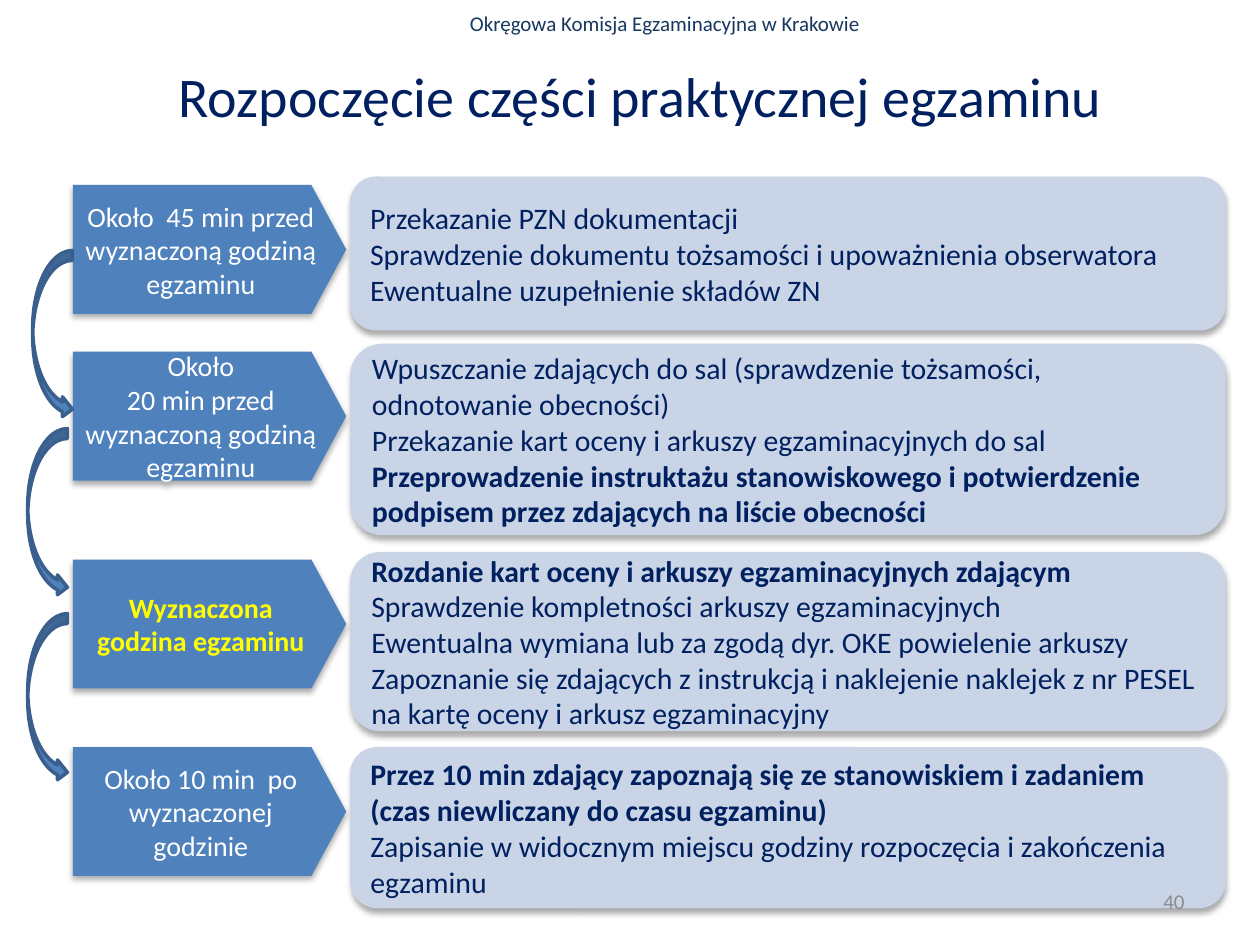
import dataclasses

import lxml.etree
import pptx
import pptx.dml.color
import pptx.enum.shapes
import pptx.enum.text
import pptx.oxml.ns
import pptx.util

Cm = pptx.util.Cm
Pt = pptx.util.Pt
MSO_SHAPE = pptx.enum.shapes.MSO_SHAPE
PP_ALIGN = pptx.enum.text.PP_ALIGN
MSO_ANCHOR = pptx.enum.text.MSO_ANCHOR


@dataclasses.dataclass(frozen=True)
class Theme:
    font: str = "Calibri"
    navy: str = "002060"
    header: str = "17375E"
    blue: str = "4F81BD"
    outline: str = "3A5F8C"
    card: str = "C9D4E6"
    white: str = "FFFFFF"
    yellow: str = "FFFF00"
    grey: str = "8C8C8C"
    shadow: str = "000000"
    title_size: int = 32
    card_size: int = 17
    tag_size: int = 16
    small_size: int = 12


def rgb(color):
    return pptx.dml.color.RGBColor.from_string(color)


class SlideBuilder:
    def __init__(self, prs, theme):
        self.theme = theme
        self.s = prs.slides.add_slide(prs.slide_layouts[5])

    def fill_text(self, tf, lines, size, color, align, anchor=MSO_ANCHOR.MIDDLE):
        tf.word_wrap = True
        tf.vertical_anchor = anchor
        for i, (text, bold) in enumerate(lines):
            p = tf.paragraphs[0] if i == 0 else tf.add_paragraph()
            p.alignment = align
            r = p.add_run()
            r.text = text
            r.font.name = self.theme.font
            r.font.size = Pt(size)
            r.font.bold = bold
            r.font.color.rgb = rgb(color)

    def shape(self, kind, box, fill):
        sp = self.s.shapes.add_shape(kind, *map(Cm, box))
        sp.shadow.inherit = False
        sp.fill.solid()
        sp.fill.fore_color.rgb = rgb(fill)
        sp.line.fill.background()
        return sp

    def drop_shadow(self, sp):
        qn = pptx.oxml.ns.qn
        effects = sp.element.spPr.find(qn("a:effectLst"))
        shadow = lxml.etree.SubElement(
            effects, qn("a:outerShdw"), blurRad=str(Pt(3.5)), dist=str(Pt(2.2)),
            dir="5400000", rotWithShape="0")
        color = lxml.etree.SubElement(shadow, qn("a:srgbClr"), val=self.theme.shadow)
        lxml.etree.SubElement(color, qn("a:alpha"), val="32000")

    def title(self, text, box):
        sp = self.s.shapes.title
        sp.left, sp.top, sp.width, sp.height = map(Cm, box)
        self.fill_text(sp.text_frame, [(text, False)], self.theme.title_size,
                       self.theme.navy, PP_ALIGN.CENTER)

    def label(self, text, box, color, align, anchor):
        sp = self.s.shapes.add_textbox(*map(Cm, box))
        self.fill_text(sp.text_frame, [(text, False)], self.theme.small_size,
                       color, align, anchor)

    def tag(self, lines, top, color):
        sp = self.shape(MSO_SHAPE.PENTAGON, (1.47, top, 5.51, 2.6), self.theme.blue)
        sp.adjustments[0] = 0.27
        self.drop_shadow(sp)
        self.fill_text(sp.text_frame, lines, self.theme.tag_size, color,
                       PP_ALIGN.CENTER)

    def card(self, lines, top, height):
        sp = self.shape(MSO_SHAPE.ROUNDED_RECTANGLE, (7.06, top, 17.65, height),
                        self.theme.card)
        self.drop_shadow(sp)
        self.fill_text(sp.text_frame, lines, self.theme.card_size, self.theme.navy,
                       PP_ALIGN.LEFT)

    def arrow(self, left, top):
        sp = self.shape(MSO_SHAPE.CURVED_RIGHT_ARROW, (left, top, 0.8, 3.4),
                        self.theme.blue)
        sp.line.color.rgb = rgb(self.theme.outline)
        sp.line.width = Pt(2)


def main():
    prs = pptx.Presentation()
    prs.slide_width, prs.slide_height = Cm(25.4), Cm(19.05)
    theme = Theme()
    slide = SlideBuilder(prs, theme)

    steps = [
        (3.73, theme.white,
         [("Około  45 min przed wyznaczoną godziną egzaminu", False)],
         3.56, 3.1,
         [("Przekazanie PZN dokumentacji", False),
          ("Sprawdzenie dokumentu tożsamości i upoważnienia obserwatora", False),
          ("Ewentualne uzupełnienie składów ZN", False)]),
        (7.09, theme.white,
         [("Około", False), ("20 min przed wyznaczoną godziną egzaminu", False)],
         6.93, 3.86,
         [("Wpuszczanie zdających do sal (sprawdzenie tożsamości, "
           "odnotowanie obecności)", False),
          ("Przekazanie kart oceny i arkuszy egzaminacyjnych do sal", False),
          ("Przeprowadzenie instruktażu stanowiskowego i potwierdzenie "
           "podpisem przez zdających na liście obecności", True)]),
        (11.28, theme.yellow,
         [("Wyznaczona", True), ("godzina egzaminu", True)],
         11.13, 3.61,
         [("Rozdanie kart oceny i arkuszy egzaminacyjnych zdającym", True),
          ("Sprawdzenie kompletności arkuszy egzaminacyjnych", False),
          ("Ewentualna wymiana lub za zgodą dyr. OKE powielenie arkuszy", False),
          ("Zapoznanie się zdających z instrukcją i naklejenie naklejek "
           "z nr PESEL na kartę oceny i arkusz egzaminacyjny", False)]),
        (15.06, theme.white,
         [("Około 10 min  po wyznaczonej godzinie", False)],
         15.06, 3.25,
         [("Przez 10 min zdający zapoznają się ze stanowiskiem i zadaniem "
           "(czas niewliczany do czasu egzaminu)", True),
          ("Zapisanie w widocznym miejscu godziny rozpoczęcia i zakończenia "
           "egzaminu", False)]),
    ]

    slide.label("Okręgowa Komisja Egzaminacyjna w Krakowie", (2.9, 0.08, 21.01, 0.76),
                theme.header, PP_ALIGN.CENTER, MSO_ANCHOR.TOP)
    slide.title("Rozpoczęcie części praktycznej egzaminu", (1.7, 0.33, 22.43, 3.18))
    for tag_top, color, tag_lines, card_top, height, card_lines in steps:
        slide.tag(tag_lines, tag_top, color)
        slide.card(card_lines, card_top, height)
    for left, top in ((0.66, 5.05), (0.56, 8.64), (0.56, 12.37)):
        slide.arrow(left, top)
    slide.label("40", (18.21, 17.65, 5.92, 1.02), theme.grey, PP_ALIGN.RIGHT,
                MSO_ANCHOR.MIDDLE)
    prs.save("out.pptx")


if __name__ == "__main__":
    main()
